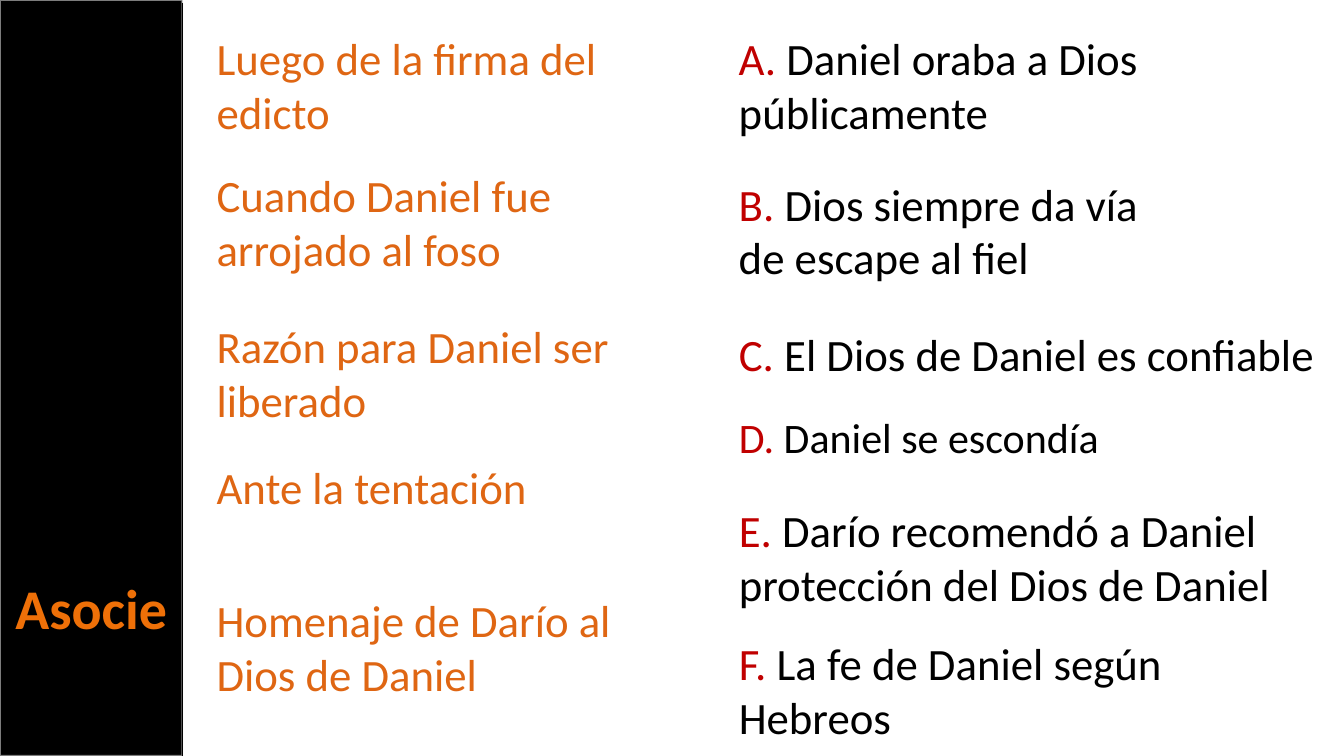
import dataclasses

import lxml.etree
import pptx
import pptx.dml.color
import pptx.enum.shapes
import pptx.enum.text
import pptx.oxml
import pptx.oxml.ns
import pptx.util

Pt = pptx.util.Pt
RGBColor = pptx.dml.color.RGBColor


@dataclasses.dataclass(frozen=True)
class Theme:
    font: str = "Calibri"
    black: str = "000000"
    border: str = "F9F9F9"
    title: str = "EE7008"
    prompt: str = "DF6613"
    letter: str = "C00000"
    title_size: float = 40
    text_size: float = 32
    small_size: float = 30


class SlideBuilder:
    def __init__(self, slide, theme):
        self.slide = slide
        self.theme = theme

    def format_run(self, run, size, color, bold=False):
        run.font.name = self.theme.font
        run.font.size = Pt(size)
        run.font.bold = bold
        run.font.color.rgb = RGBColor.from_string(color)

    def sidebar(self, width, height):
        panel = self.slide.shapes.add_shape(
            pptx.enum.shapes.MSO_SHAPE.RECTANGLE, 0, 0, Pt(width), Pt(height))
        panel.shadow.inherit = False
        panel.fill.solid()
        panel.fill.fore_color.rgb = RGBColor.from_string(self.theme.black)
        panel.line.width = Pt(1.35)
        panel.line.color.rgb = RGBColor.from_string(self.theme.border)
        color = panel.line._ln.find(".//" + pptx.oxml.ns.qn("a:srgbClr"))
        lxml.etree.SubElement(color, pptx.oxml.ns.qn("a:alpha"), val="50000")
        return panel

    def title(self, text, left, top, width, height, panel):
        title = self.slide.shapes.title
        title.left, title.top = Pt(left), Pt(top)
        title.width, title.height = Pt(width), Pt(height)
        frame = title.text_frame
        frame.text = text
        frame.word_wrap = True
        frame.auto_size = pptx.enum.text.MSO_AUTO_SIZE.SHAPE_TO_FIT_TEXT
        frame.vertical_anchor = pptx.enum.text.MSO_ANCHOR.TOP
        para = frame.paragraphs[0]
        para.alignment = pptx.enum.text.PP_ALIGN.CENTER
        self.format_run(para.runs[0], self.theme.title_size, self.theme.title, True)
        panel._element.addnext(title._element)

    def text(self, parts, left, top, width, height, size):
        box = self.slide.shapes.add_textbox(Pt(left), Pt(top), Pt(width), Pt(height))
        frame = box.text_frame
        frame.word_wrap = True
        frame.auto_size = pptx.enum.text.MSO_AUTO_SIZE.SHAPE_TO_FIT_TEXT
        for words, color in parts:
            run = frame.paragraphs[0].add_run()
            run.text = words
            self.format_run(run, size, color)

    def line(self, x, top, bottom, width):
        line = self.slide.shapes.add_connector(
            pptx.enum.shapes.MSO_CONNECTOR.STRAIGHT, Pt(x), Pt(top), Pt(x), Pt(bottom))
        line.line.width = Pt(width)
        line.line.color.rgb = RGBColor.from_string(self.theme.black)
        lxml.etree.SubElement(line._element.spPr, pptx.oxml.ns.qn("a:effectLst"))


def main():
    theme = Theme()
    deck = pptx.Presentation()
    deck.slide_width, deck.slide_height = Pt(960), Pt(540)
    page = SlideBuilder(deck.slides.add_slide(deck.slide_layouts[5]), theme)

    sidebar_width = 130.3
    one_line, two_lines = 46, 85
    panel = page.sidebar(sidebar_width, 540)
    page.title("Asocie", 0, 406, sidebar_width, 55.7, panel)
    page.line(sidebar_width, 2, 540, 0.85)

    prompts = [
        ("Luego de la firma del edicto", 18.7, 330.5, two_lines),
        ("Cuando Daniel fue arrojado al foso", 116.6, 276.5, two_lines),
        ("Razón para Daniel ser liberado", 223.9, 297.4, two_lines),
        ("Ante la tentación", 324.7, 316, one_line),
        ("Homenaje de Darío al Dios de Daniel", 419.8, 306.7, two_lines),
    ]
    for words, top, width, height in prompts:
        page.text([(words, theme.prompt)], 147.6, top, width, height, theme.text_size)

    answers = [
        ("Daniel oraba a Dios públicamente", 18.7, 360, two_lines, theme.text_size),
        ("Dios siempre da vía de escape al fiel", 122.4, 326.2, two_lines, theme.text_size),
        ("El Dios de Daniel es confiable", 229.7, 433.4, one_line, theme.text_size),
        ("Daniel se escondía", 290.2, 301, 43.9, theme.small_size),
        ("Darío recomendó a Daniel protección del Dios de Daniel",
         355.7, 402.5, two_lines, theme.text_size),
        ("La fe de Daniel según Hebreos", 450.7, 402.5, two_lines, theme.text_size),
    ]
    for letter, (words, top, width, height, size) in zip("ABCDEF", answers):
        parts = [(f"{letter}. ", theme.letter), (words, theme.black)]
        page.text(parts, 520.6, top, width, height, size)

    deck.save("out.pptx")


if __name__ == "__main__":
    main()
